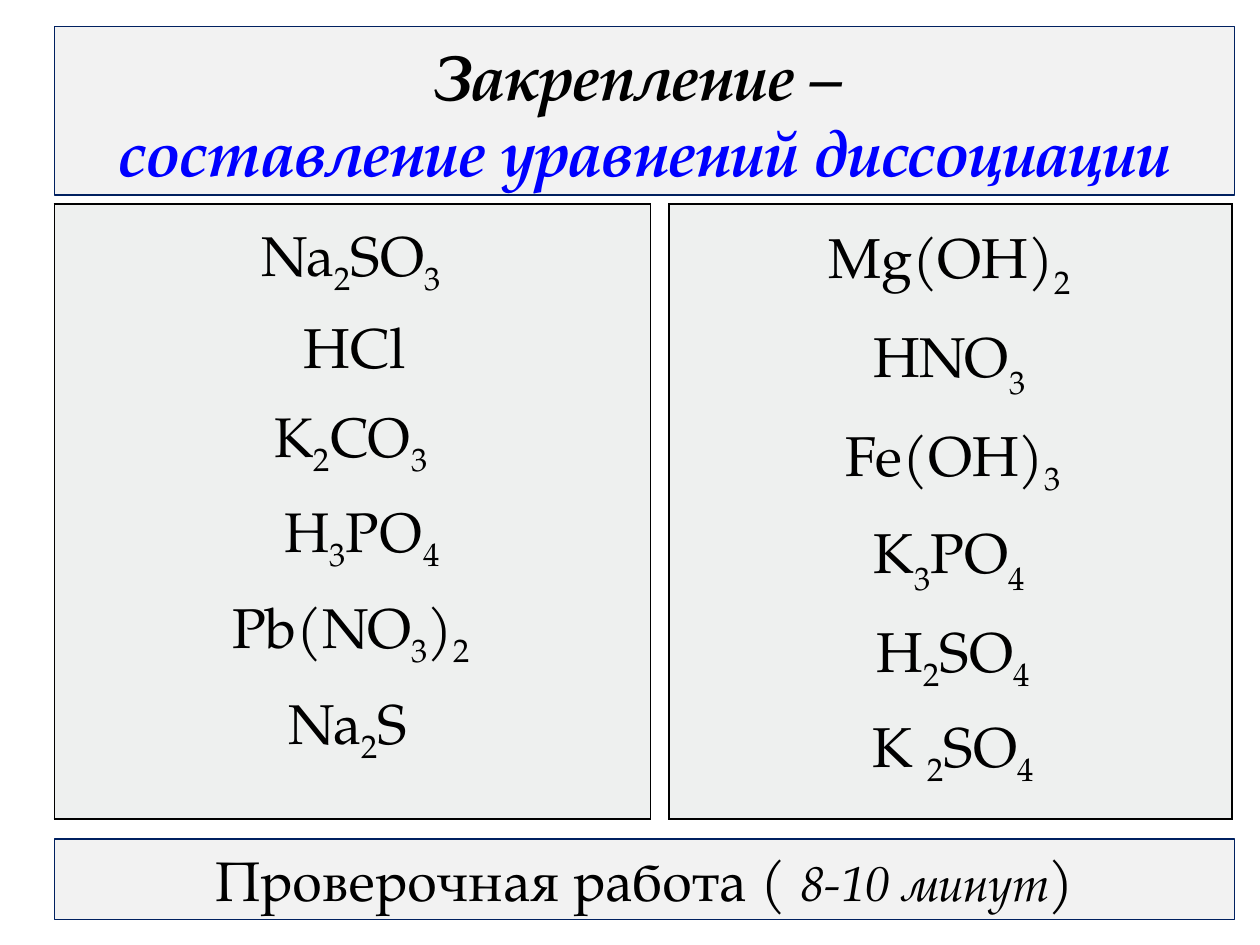
from lxml.etree import SubElement
from pptx import Presentation
from pptx.dml.color import RGBColor
from pptx.enum.shapes import MSO_SHAPE as Shape
from pptx.enum.text import MSO_ANCHOR as Anchor, MSO_AUTO_SIZE as AutoSize, PP_ALIGN as Align
from pptx.oxml.ns import qn
from pptx.util import Pt

FONT = "TeX Gyre Pagella"
# Underscores separate normal text from subscripts; the number is the baseline shift in %
SALTS_AND_ACIDS = [
    ("Na_2_SO_3 ", -25), ("HCl", -25), ("К_2_СО_3 ", -25),
    (" Н_3_РО_4", -25), ("Pb(NO_3_)_2 ", -25), ("Na_2_S ", -25),
]
BASES_AND_OTHERS = [
    ("Mg(OH)_2 ", -30), ("HNO_3 ", -30), ("Fe(OH)_3", -25),
    ("K_3_PO_4 ", -30), ("H_2_SO_4", -25), ("K _2_SO_4", -25),
]


def color(hex_value):
    return RGBColor.from_string(hex_value)


def set_attributes(target, values):
    for name, value in values.items():
        setattr(target, name, value)


def add_run(paragraph, text, size=32, hex_color="000000", **style):
    run = paragraph.add_run()
    run.text = text
    set_attributes(run.font, {"name": FONT, "size": Pt(size), **style})
    run.font.color.rgb = color(hex_color)
    return run


def style_panel(panel):
    panel.fill.solid()
    panel.fill.fore_color.rgb = color("F2F2F2")
    panel.line.color.rgb = color("002060")
    panel.line.width = Pt(0.75)


def build_title(slide, left, top, width, height):
    title = slide.shapes.title
    set_attributes(title, {"left": Pt(left), "top": Pt(top),
                           "width": Pt(width), "height": Pt(height)})
    style_panel(title)
    set_attributes(title.text_frame, {"word_wrap": True, "auto_size": AutoSize.NONE,
                                      "vertical_anchor": Anchor.BOTTOM})
    heading = title.text_frame.paragraphs[0]
    heading.alignment = Align.CENTER
    add_run(heading, "Закрепление – ", 36, bold=True, italic=True)
    heading.add_line_break()
    add_run(heading, "составление уравнений диссоциации", 36, "0000FF",
            bold=True, italic=True)


def draw_borders(cell):
    properties = cell._tc.get_or_add_tcPr()
    for index, side in enumerate(("lnL", "lnR", "lnT", "lnB")):
        border = properties.makeelement(qn(f"a:{side}"), {"w": str(Pt(1))})
        fill = SubElement(border, qn("a:solidFill"))
        SubElement(fill, qn("a:srgbClr"), val="000000")
        properties.insert(index, border)


def add_formula(paragraph, formula, shift):
    set_attributes(paragraph, {"alignment": Align.CENTER, "line_spacing": 1.5})
    indent = paragraph._p.get_or_add_pPr()
    indent.set("marL", str(Pt(3)))
    indent.set("indent", "0")
    for index, part in enumerate(formula.split("_")):
        run = add_run(paragraph, part)
        if index % 2:
            run.font._element.set("baseline", str(shift * 1000))


def build_formula_table(slide, formulas, left, top, width, height, inset):
    table = slide.shapes.add_table(1, 1, Pt(left), Pt(top), Pt(width), Pt(height)).table
    set_attributes(table, {"first_row": False, "horz_banding": False})
    cell = table.cell(0, 0)
    set_attributes(cell, {"margin_left": Pt(inset), "margin_right": Pt(inset),
                          "margin_top": 0, "margin_bottom": 0,
                          "vertical_anchor": Anchor.TOP})
    cell.fill.solid()
    cell.fill.fore_color.rgb = color("EEF0EF")
    draw_borders(cell)
    for index, (formula, shift) in enumerate(formulas):
        frame = cell.text_frame
        add_formula(frame.add_paragraph() if index else frame.paragraphs[0], formula, shift)


def build_test_note(slide, left, top, width, height):
    note = slide.shapes.add_shape(Shape.RECTANGLE, Pt(left), Pt(top), Pt(width), Pt(height))
    note.shadow.inherit = False
    style_panel(note)
    set_attributes(note.text_frame, {"word_wrap": True, "vertical_anchor": Anchor.TOP,
                                     "auto_size": AutoSize.SHAPE_TO_FIT_TEXT})
    line = note.text_frame.paragraphs[0]
    line.alignment = Align.CENTER
    add_run(line, "Проверочная работа ( ")
    add_run(line, "8-10 минут", 28, italic=True)
    add_run(line, ")")


def main():
    deck = Presentation()
    set_attributes(deck, {"slide_width": Pt(720), "slide_height": Pt(540)})
    slide = deck.slides.add_slide(deck.slide_layouts[5])

    left, width = 31, 674.6
    table_top, table_height = 116.6, 351.4
    build_title(slide, left, 15, width, 96.5)
    # Two columns of formulas
    build_formula_table(slide, SALTS_AND_ACIDS, left, table_top, 340.6, table_height, 5.8)
    build_formula_table(slide, BASES_AND_OTHERS, 382.3, table_top, 321.8, table_height, 5)
    # Closing line
    build_test_note(slide, left, 479.5, width, 46)

    deck.save("out.pptx")


if __name__ == "__main__":
    main()
